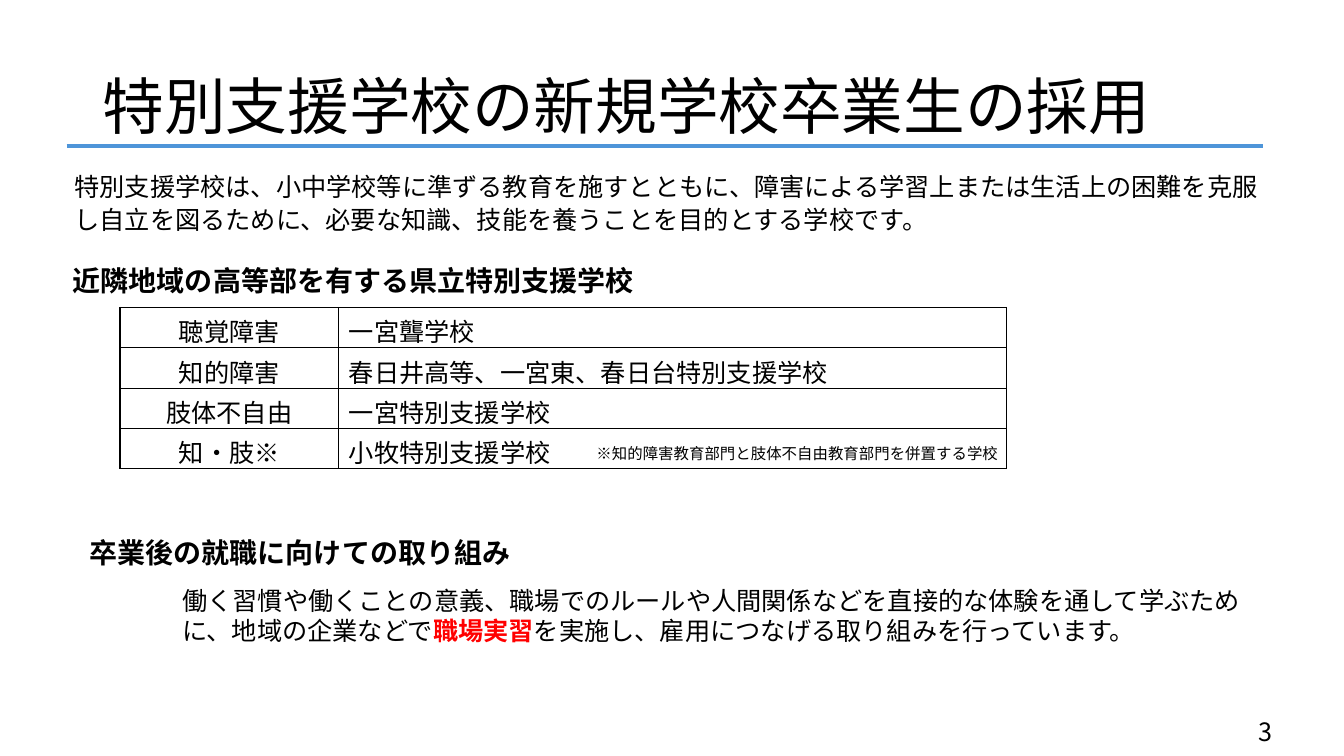
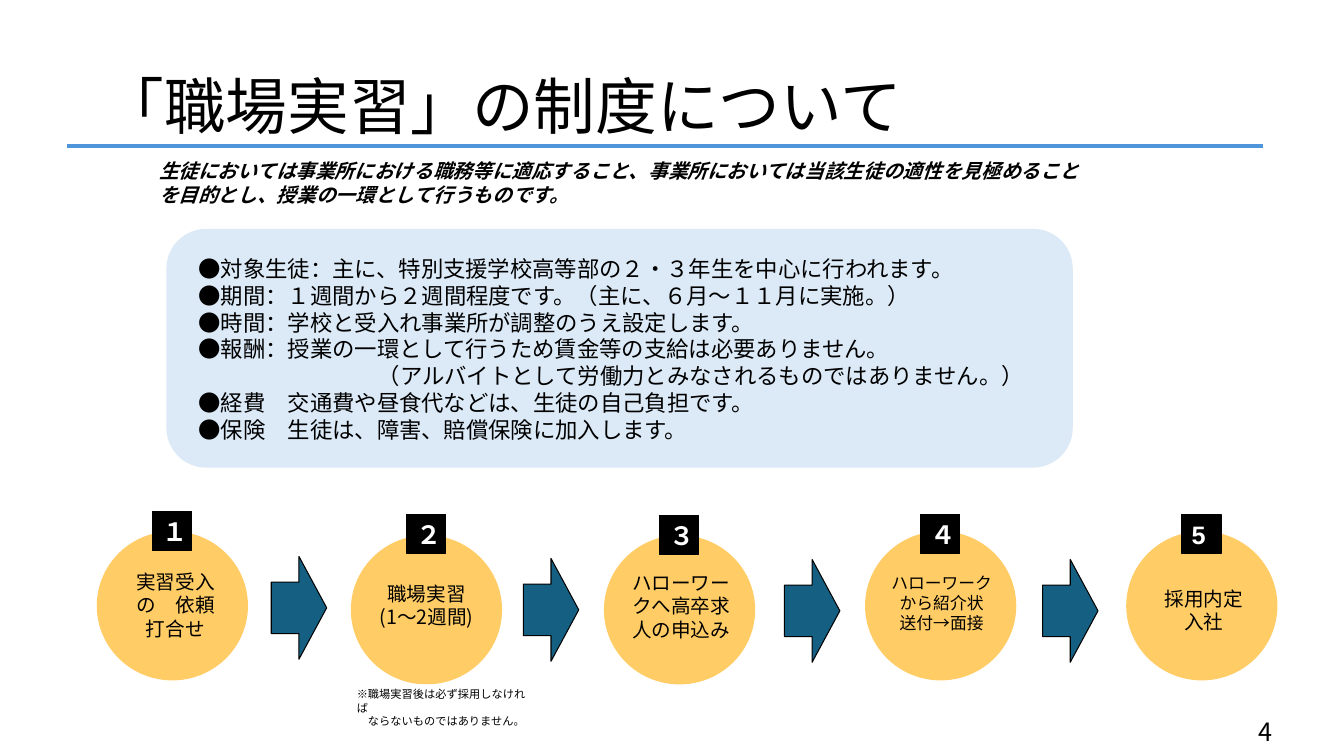
"""Build two slides on hiring and work training of special needs school students."""
from lxml import etree
from pptx import Presentation
from pptx.dml.color import RGBColor
from pptx.enum.shapes import MSO_CONNECTOR, MSO_SHAPE
from pptx.enum.text import MSO_ANCHOR, PP_ALIGN
from pptx.oxml.ns import qn
from pptx.util import Inches, Pt

JAPANESE, LATIN = "Noto Sans CJK JP", "Arial"
BLACK, WHITE, RED = "000000", "FFFFFF", "FF0000"
RULE_BLUE, PANEL_BLUE, ARROW_BLUE, CIRCLE_ORANGE = "4E95D9", "DCEAF7", "156082", "FFCC66"
LEFT, CENTER = PP_ALIGN.LEFT, PP_ALIGN.CENTER
TOP, MIDDLE = MSO_ANCHOR.TOP, MSO_ANCHOR.MIDDLE
RECT, ROUNDED = MSO_SHAPE.RECTANGLE, MSO_SHAPE.ROUNDED_RECTANGLE
OVAL, ARROW = MSO_SHAPE.OVAL, MSO_SHAPE.RIGHT_ARROW
STRAIGHT = MSO_CONNECTOR.STRAIGHT
rgb = RGBColor.from_string


def add_box(slide, place, kind=None, fill=WHITE, outline=None):
    """Add a text box, or a filled shape when a kind is given; return its text frame."""
    place = [Inches(length) for length in place]
    if kind is None:
        return slide.shapes.add_textbox(*place).text_frame
    shape = slide.shapes.add_shape(kind, *place)
    shape.shadow.inherit = False
    shape.fill.solid()
    shape.fill.fore_color.rgb = rgb(fill)
    if outline:
        shape.line.color.rgb = rgb(outline)
        shape.line.width = Pt(0.75)
    else:
        shape.line.fill.background()
    return shape.text_frame


def write(frame, paragraphs, size, align=LEFT, anchor=TOP, bold=False, italic=False,
          color=BLACK, font=JAPANESE, spacing=1.0):
    """Fill a text frame with paragraphs, each a string or a list of runs."""
    frame.word_wrap = True
    frame.vertical_anchor = anchor
    for index, runs in enumerate(paragraphs):
        paragraph = frame.add_paragraph() if index else frame.paragraphs[0]
        for text in [runs] if isinstance(runs, str) else runs:
            paragraph.add_run().text = text
        paragraph.alignment = align
        paragraph.line_spacing = spacing
        paragraph.font.size = Pt(size)
        paragraph.font.bold = bold
        paragraph.font.italic = italic
        paragraph.font.color.rgb = rgb(color)
        paragraph.font.name = font
        defaults = paragraph._p.pPr.find(qn("a:defRPr"))
        etree.SubElement(defaults, qn("a:ea"), typeface=font)


prs = Presentation()
prs.slide_width, prs.slide_height = Inches(13.33), Inches(7.5)

slides = []
for number, title in [("3", "特別支援学校の新規学校卒業生の採用"), ("4", "「職場実習」の制度について")]:
    slide = prs.slides.add_slide(prs.slide_layouts[6])
    rule = slide.shapes.add_connector(STRAIGHT, Inches(0.66), Inches(1.45), Inches(12.53), Inches(1.45))
    rule.line.color.rgb = rgb(RULE_BLUE)
    rule.line.width = Pt(3)
    etree.SubElement(rule._element.spPr, qn("a:effectLst"))
    write(add_box(slide, (0.92, 0.36, 11.5, 1.45)), [title], 44, anchor=MIDDLE, spacing=0.9)
    write(add_box(slide, (12.38, 7.06, 0.49, 0.4)), [number], 18)
    slides.append(slide)
hiring, training = slides

write(add_box(hiring, (5.68, 4.28, 4.46, 0.44), RECT),
      ["※知的障害教育部門と肢体不自由教育部門を併置する学校"], 11, CENTER, MIDDLE)
write(add_box(hiring, (0.64, 1.62, 12.06, 1.23)),
      ["特別支援学校は、小中学校等に準ずる教育を施すとともに、障害による学習上または生活上の困難を克服し"
       "自立を図るために、必要な知識、技能を養うことを目的とする学校です。"], 18, spacing=1.1)
write(add_box(hiring, (0.52, 2.43, 5.97, 0.7), RECT),
      ["近隣地域の高等部を有する県立特別支援学校"], 20, CENTER, MIDDLE, bold=True)

schools = [
    ("聴覚障害", "一宮聾学校"),
    ("知的障害", "春日井高等、一宮東、春日台特別支援学校"),
    ("肢体不自由", "一宮特別支援学校"),
    ("知・肢※", "小牧特別支援学校"),
]
school_table = hiring.shapes.add_table(
    len(schools), 2, Inches(1.19), Inches(3.05), Inches(8.79), Inches(1.48)).table
school_table.first_row = school_table.horz_banding = False
school_table.columns[0].width, school_table.columns[1].width = Inches(2.17), Inches(6.62)
for row, entries in enumerate(schools):
    for column, (entry, align) in enumerate(zip(entries, (CENTER, LEFT))):
        cell = school_table.cell(row, column)
        write(cell.text_frame, [entry], 18, align)
        cell.vertical_anchor = MIDDLE
        properties = cell._tc.get_or_add_tcPr()
        for side in ("a:lnL", "a:lnR", "a:lnT", "a:lnB"):
            border = etree.SubElement(properties, qn(side), w=str(Pt(1)))
            paint = etree.SubElement(border, qn("a:solidFill"))
            etree.SubElement(paint, qn("a:srgbClr"), val=BLACK)
        cell.fill.background()

write(add_box(hiring, (0.79, 5.13, 5.97, 0.7), RECT),
      ["卒業後の就職に向けての取り組み"], 20, anchor=MIDDLE, bold=True)
efforts = add_box(hiring, (1.71, 5.76, 10.71, 0.71))
write(efforts, [["働く習慣や働くことの意義、職場でのルールや人間関係などを直接的な体験を通して学ぶために、"
                 "地域の企業などで", "職場実習", "を実施し、雇用につなげる取り組みを行っています。"]], 18)
keyword = efforts.paragraphs[0].runs[1]
keyword.font.bold = True
keyword.font.color.rgb = rgb(RED)

write(add_box(training, (1.48, 1.53, 9.34, 0.57)),
      ["生徒においては事業所における職務等に適応すること、事業所においては当該生徒の適性を見極めること"
       "を目的とし、授業の一環として行うものです。"], 14, bold=True, italic=True)
add_box(training, (1.65, 2.27, 8.99, 2.37), ROUNDED, PANEL_BLUE)
conditions = add_box(training, (1.87, 2.48, 8.89, 2.46))
write(conditions, [
    ["●", "対象生徒：主に、特別支援学校高等部の２・３年生を中心に行われます。"],
    ["●", "期間：１週間から２週間程度です。（主に、６月～１１月に実施。）"],
    ["●", "時間：学校と受入れ事業所が調整のうえ設定します。"],
    "●報酬：授業の一環として行うため賃金等の支給は必要ありません。",
    "（アルバイトとして労働力とみなされるものではありません。）",
    "●経費　交通費や昼食代などは、生徒の自己負担です。",
    "●保険　生徒は、障害、賠償保険に加入します。",
], 16)
for condition in conditions.paragraphs[:3]:
    condition.runs[0].font.bold = True

steps = [
    ("１", 0.96, 5.27, 5.07, (1.15, 5.6, 1.18, 0.91), 14, CENTER, ["実習受入の　依頼", "打合せ"]),
    ("２", 3.48, 5.31, 5.1, (3.64, 5.72, 1.18, 0.47), 14, CENTER, ["職場実習", "(1～2週間)"]),
    ("３", 5.99, 5.31, 5.11, (6.17, 5.61, 1.18, 0.91), 14, LEFT, ["ハローワークへ高卒求人の申込み"]),
    ("４", 8.58, 5.27, 5.1, (8.67, 5.63, 1.34, 0.91), 12, CENTER, ["ハローワークから紹介状", "送付→面接"]),
    ("5", 11.17, 5.27, 5.1, (11.35, 5.77, 1.18, 0.47), 14, CENTER, ["採用内定", "入社"]),
]
for number, left, circle_top, badge_top, label_place, size, align, label in steps:
    add_box(training, (left, circle_top, 1.5, 1.48), OVAL, CIRCLE_ORANGE)
    write(add_box(training, label_place), label, size, align)
    write(add_box(training, (left + 0.55, badge_top, 0.39, 0.39), RECT, BLACK, BLACK),
          [number], 18, bold=True, color=WHITE, font=LATIN)
for left, top in [(2.69, 5.52), (5.19, 5.54), (7.78, 5.55), (10.34, 5.55)]:
    add_box(training, (left, top, 0.55, 1.02), ARROW, ARROW_BLUE, BLACK)

caution = add_box(training, (3.44, 6.79, 1.98, 0.46), RECT)
write(caution, ["※職場実習後は必ず採用しなければ", "ならないものではありません。"], 8, anchor=MIDDLE)
for paragraph, indent in [(conditions.paragraphs[4], 1.78), (caution.paragraphs[1], 0.11)]:
    paragraph._p.pPr.set("marL", str(Inches(indent)))
    paragraph._p.pPr.set("indent", "0")

prs.save("out.pptx")
